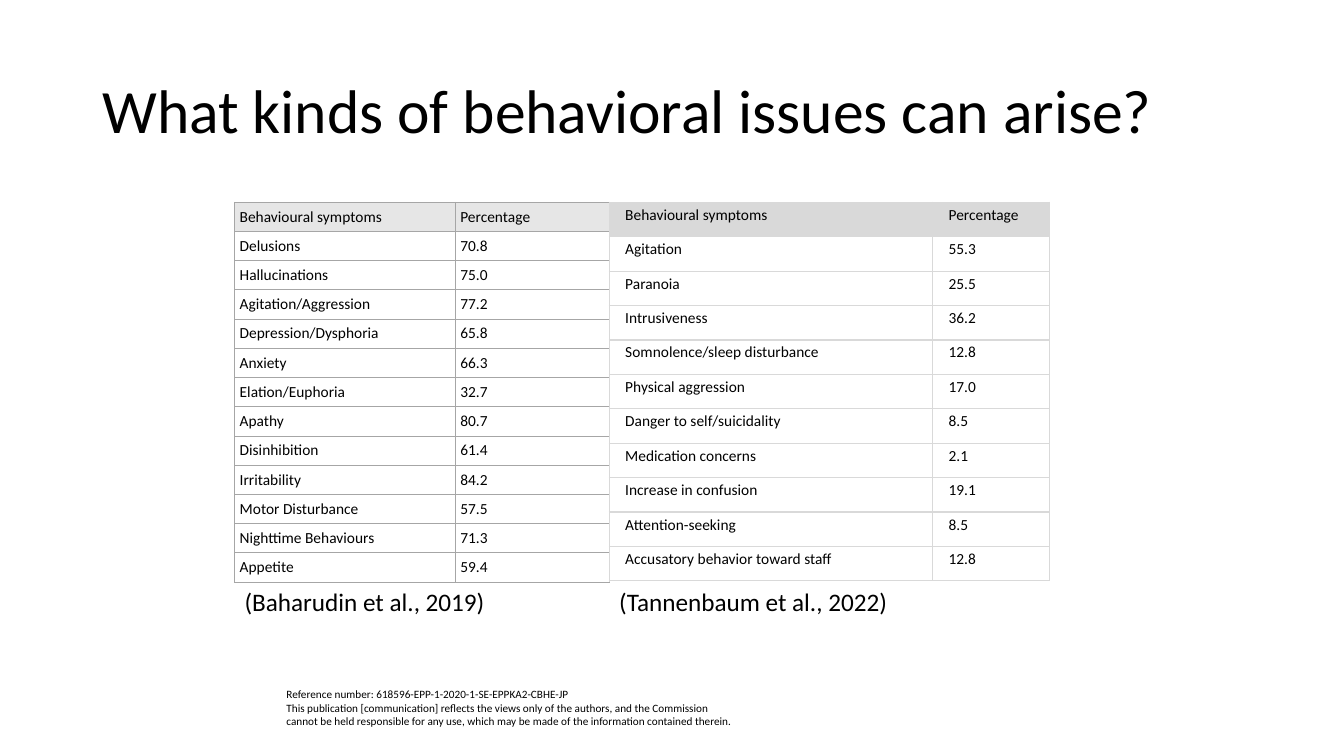
"""Build a slide comparing two tables of behavioural symptoms."""
from copy import deepcopy

from lxml.etree import SubElement
from pptx import Presentation
from pptx.dml.color import RGBColor
from pptx.enum.text import MSO_ANCHOR
from pptx.oxml import parse_xml
from pptx.oxml.ns import nsdecls, qn
from pptx.util import Pt

BLACK = RGBColor(0x00, 0x00, 0x00)
PALE_GREY = RGBColor(0xE6, 0xE6, 0xE6)
LIGHT_GREY = RGBColor(0xD9, 0xD9, 0xD9)
EDGE_GREY = RGBColor(0xD5, 0xD5, 0xD5)
MID_GREY = RGBColor(0xA6, 0xA6, 0xA6)


def write(para, text, size, line_spacing):
    para.text = text
    para.line_spacing = line_spacing
    for span in para.runs:
        for name, value in {"name": "Calibri", "size": Pt(size)}.items():
            setattr(span.font, name, value)
        span.font.color.rgb = BLACK
    for line_break in para._p.findall(qn("a:br")):
        line_break.append(deepcopy(para.runs[0].font._element))


def add_border(cell, position, side, color, width):
    line = parse_xml(f'<a:ln{side} {nsdecls("a")} w="{Pt(width)}"/>')
    fill = SubElement(line, qn("a:solidFill"))
    SubElement(fill, qn("a:srgbClr"), val=str(color))
    cell._tc.get_or_add_tcPr().insert(position, line)


deck = Presentation()
deck.slide_width, deck.slide_height = Pt(960), Pt(540)
page = deck.slides.add_slide(deck.slide_layouts[6])

TABLE_TOP = 144.5
LEFT_TABLE, RIGHT_TABLE = 167.6, 435.2
HEADINGS = ("Behavioural symptoms", "Percentage")

texts = [
    ("Reference number: 618596-EPP-1-2020-1-SE-EPPKA2-CBHE-JP\n"
     "This publication [communication] reflects the views only of the authors, "
     "and the Commission cannot be held responsible for any use, "
     "which may be made of the information contained therein.",
     (197.5, 487.5, 334, 36), 8, 1.0, MSO_ANCHOR.TOP),
    ("What kinds of behavioral issues can arise?",
     (66, 28.75, 828, 104.4), 44, 0.9, MSO_ANCHOR.MIDDLE),
    ("(Baharudin et al., 2019)",
     (LEFT_TABLE, 415, 267.6, 29), 18, 1.0, MSO_ANCHOR.TOP),
    ("(Tannenbaum et al., 2022)",
     (RIGHT_TABLE, 415, 267.6, 29), 18, 1.0, MSO_ANCHOR.TOP),
]
for text, bounds, size, spacing, anchor in texts:
    box = page.shapes.add_textbox(*map(Pt, bounds))
    box.text_frame.word_wrap = True
    box.text_frame.vertical_anchor = anchor
    write(box.text_frame.paragraphs[0], text, size, spacing)

tables = [
    {
        "left": LEFT_TABLE, "columns": (157.6, 110), "row_height": 20.88,
        "header": PALE_GREY, "border": MID_GREY, "right_edge": EDGE_GREY,
        "border_width": 0.75, "indent": 0, "spacing": 1.0,
        "margins": (3.6, 3.6, 3.6, 3.6),
        "rows": [
            ("Delusions", "70.8"),
            ("Hallucinations", "75.0"),
            ("Agitation/Aggression", "77.2"),
            ("Depression/Dysphoria", "65.8"),
            ("Anxiety", "66.3"),
            ("Elation/Euphoria", "32.7"),
            ("Apathy", "80.7"),
            ("Disinhibition", "61.4"),
            ("Irritability", "84.2"),
            ("Motor Disturbance", "57.5"),
            ("Nighttime Behaviours", "71.3"),
            ("Appetite", "59.4"),
        ],
    },
    {
        "left": RIGHT_TABLE, "columns": (231, 83.5), "row_height": 24.6,
        "header": LIGHT_GREY, "border": LIGHT_GREY, "right_edge": LIGHT_GREY,
        "border_width": 1, "indent": 11.4, "spacing": 1.07,
        "margins": (0, 1.4, 5.8, 0),
        "rows": [
            ("Agitation", "55.3"),
            ("Paranoia", "25.5"),
            ("Intrusiveness", "36.2"),
            ("Somnolence/sleep disturbance", "12.8"),
            ("Physical aggression", "17.0"),
            ("Danger to self/suicidality", "8.5"),
            ("Medication concerns", "2.1"),
            ("Increase in confusion", "19.1"),
            ("Attention-seeking", "8.5"),
            ("Accusatory behavior toward staff", "12.8"),
        ],
    },
]
for design in tables:
    rows = [HEADINGS] + design["rows"]
    table = page.shapes.add_table(
        len(rows), len(HEADINGS), Pt(design["left"]), Pt(TABLE_TOP),
        Pt(sum(design["columns"])), Pt(design["row_height"] * len(rows))).table
    table.first_row = table.horz_banding = False
    for column, width in zip(table.columns, design["columns"]):
        column.width = Pt(width)
    for row_index, values in enumerate(rows):
        table.rows[row_index].height = Pt(design["row_height"])
        for column_index, value in enumerate(values):
            cell = table.cell(row_index, column_index)
            for side, margin in zip(("left", "top", "right", "bottom"), design["margins"]):
                setattr(cell, f"margin_{side}", Pt(margin))
            if row_index == 0:
                cell.fill.solid()
                cell.fill.fore_color.rgb = design["header"]
            else:
                cell.fill.background()
            for position, side in enumerate("LRTB"):
                at_edge = side == "R" and column_index == 1
                color = design["right_edge"] if at_edge else design["border"]
                add_border(cell, position, side, color, design["border_width"])
            para = cell.text_frame.paragraphs[0]
            write(para, value, 11, design["spacing"])
            para._p.get_or_add_pPr().set("indent", str(Pt(design["indent"])))

deck.save("out.pptx")
